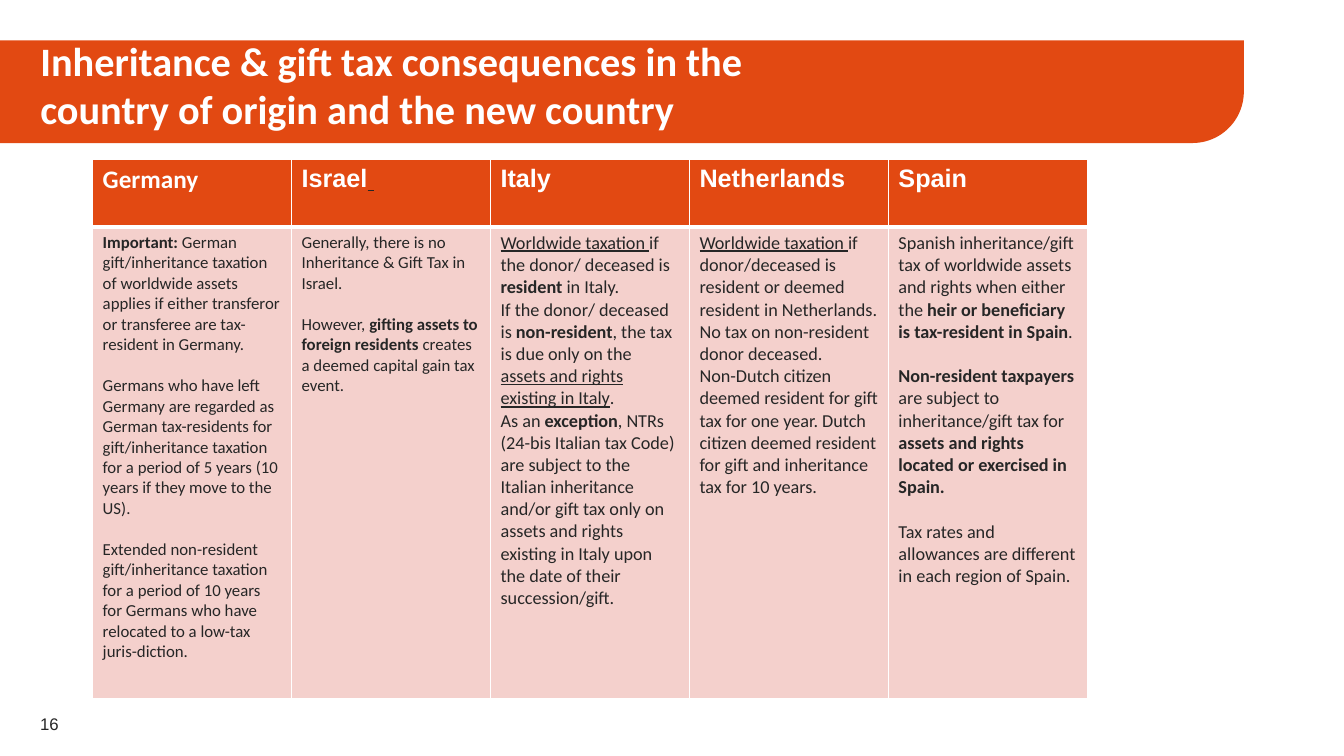
from lxml import etree
from pptx import Presentation
from pptx.dml import color
from pptx.enum import shapes, text
from pptx.oxml import ns
from pptx.util import Pt

COLORS = {"band": "E24912", "body": "F4D0CC", "ink": "262626", "white": "FFFFFF"}
HEADINGS = [
    ("Germany", "Calibri"),
    ("Israel", "Arial"),
    ("Italy", "Arial"),
    ("Netherlands", "Arial"),
    ("Spain", "Arial"),
]
BOLD = {"bold": True}
LINED = {"underline": True}
COUNTRIES = [
    {"size": 12, "gap": 14.65, "paras": [
        [("Important: ", BOLD),
         ("German gift/inheritance taxation of worldwide assets applies if either "
          "transferor or transferee are tax-resident in Germany.", {})],
        [("Germans who have left Germany are regarded as German tax-residents for "
          "gift/inheritance taxation for a period of 5 years (10 years if they move "
          "to the US).", {})],
        [("Extended non-resident gift/inheritance taxation for a period of 10 years "
          "for Germans who have relocated to a low-tax juris-diction.", {})],
    ]},
    {"size": 12, "gap": 14.65, "paras": [
        [("Generally, there is no Inheritance & Gift Tax in Israel.", {})],
        [("However, ", {}), ("gifting assets to foreign residents ", BOLD),
         ("creates a deemed capital gain tax event.", {})],
    ]},
    {"size": 13, "gap": 0, "paras": [
        [("Worldwide taxation ", LINED), ("if the donor/ deceased is ", {}),
         ("resident", BOLD), (" in Italy.", {})],
        [("If the donor/ deceased is ", {}), ("non-resident", BOLD),
         (", the tax is due only on the ", {}),
         ("assets and rights existing in Italy", LINED), (".", {})],
        [("As an ", {}), ("exception", BOLD),
         (", NTRs (24-bis Italian tax Code) are subject to the Italian inheritance "
          "and/or gift tax only on assets and rights existing in Italy upon the date "
          "of their succession/gift.", {})],
    ]},
    {"size": 13, "gap": 0, "paras": [
        [("Worldwide taxation ", LINED),
         ("if donor/deceased is resident or deemed resident in Netherlands. "
          "No tax on non-resident donor deceased.", {})],
        [("Non-Dutch citizen deemed resident for gift tax for one year. Dutch citizen "
          "deemed resident for gift and inheritance tax for 10 years.", {})],
    ]},
    {"size": 13, "gap": 15.87, "paras": [
        [("Spanish inheritance/gift tax of worldwide assets and rights when either "
          "the ", {}), ("heir or beneficiary is tax-resident in Spain", BOLD), (".", {})],
        [("Non-resident taxpayers ", BOLD),
         ("are subject to inheritance/gift tax for ", {}),
         ("assets and rights located or exercised in Spain.", BOLD)],
        [("Tax rates and allowances are different in each region of Spain.", {})],
    ]},
]


def rgb(name):
    return color.RGBColor.from_string(COLORS[name])


def write_span(para, words, size=12, face="Calibri", ink="ink", bold=False, underline=False):
    span = para.add_run()
    span.text = words
    span.font.size = Pt(size)
    span.font.name = face
    span.font.bold = bold
    span.font.underline = underline
    span.font.color.rgb = rgb(ink)


def style_cell(cell, fill, top, bottom):
    properties = cell._tc.get_or_add_tcPr()
    for side, width in (("L", 1), ("R", 1), ("T", top), ("B", bottom)):
        line = etree.SubElement(properties, ns.qn(f"a:ln{side}"), w=str(Pt(width)))
        solid = etree.SubElement(line, ns.qn("a:solidFill"))
        etree.SubElement(solid, ns.qn("a:srgbClr"), val=COLORS["white"])
    cell.fill.solid()
    cell.fill.fore_color.rgb = rgb(fill)


def place(shape, left, top, width, height):
    shape.left, shape.top = Pt(left), Pt(top)
    shape.width, shape.height = Pt(width), Pt(height)


def add_title_band(page, left, top, width, height):
    band = page.shapes.add_shape(
        shapes.MSO_SHAPE.ROUND_1_RECTANGLE,
        Pt(left), Pt(top), Pt(width), Pt(height))
    band.adjustments[0] = 0.5
    band.shadow.inherit = False
    band.fill.solid()
    band.fill.fore_color.rgb = rgb("band")
    band.line.fill.background()
    band._element.spPr.find(ns.qn("a:xfrm")).set("flipV", "1")
    page.shapes._spTree.insert(2, band._element)

    title = page.shapes.title
    place(title, left + 21.6, top + 23, 598.3, 16.6)
    frame = title.text_frame
    frame.word_wrap = True
    frame.auto_size = text.MSO_AUTO_SIZE.NONE
    frame.vertical_anchor = text.MSO_ANCHOR.MIDDLE
    para = frame.paragraphs[0]
    para.alignment = text.PP_ALIGN.LEFT
    para.line_spacing = 1.0
    para.space_before = Pt(0)
    write_span(para, "Inheritance & gift tax consequences in the country of origin "
               "and the new country", size=28.8, ink="white", bold=True)


def add_country_table(page, left, top, width, height, header_height=48.3):
    table = page.shapes.add_table(
        2, len(COUNTRIES), Pt(left), Pt(top), Pt(width), Pt(height)).table
    table.rows[0].height = Pt(header_height)
    table.rows[1].height = Pt(height - header_height)
    for index, ((heading, face), country) in enumerate(zip(HEADINGS, COUNTRIES)):
        table.columns[index].width = Pt(width / len(COUNTRIES))
        header, body = table.cell(0, index), table.cell(1, index)
        style_cell(header, "band", 1, 3)
        style_cell(body, "body", 3, 1)
        para = header.text_frame.paragraphs[0]
        write_span(para, heading, size=18, face=face, ink="white", bold=True)
        if heading == "Israel":
            write_span(para, " ", size=18, face=face, bold=True, underline=True)
        for number, spans in enumerate(country["paras"]):
            frame = body.text_frame
            para = frame.add_paragraph() if number else frame.paragraphs[0]
            para.space_before = Pt(country["gap"] if number else 0)
            for words, look in spans:
                write_span(para, words, size=country["size"], **look)


def add_page_number(page, left, top, width, height):
    box = page.shapes.add_textbox(Pt(left), Pt(top), Pt(width), Pt(height))
    box.text_frame.word_wrap = True
    box.text_frame.vertical_anchor = text.MSO_ANCHOR.MIDDLE
    write_span(box.text_frame.paragraphs[0], "16", face="Arial")


def main():
    deck = Presentation()
    deck.slide_width, deck.slide_height = Pt(960), Pt(540)
    page = deck.slides.add_slide(deck.slide_layouts[5])
    add_title_band(page, 0, 28.8, 888.5, 73.4)
    add_country_table(page, 66.2, 114, 710.6, 385)
    add_page_number(page, 21.6, 502.6, 45.4, 28.8)
    deck.save("out.pptx")


if __name__ == "__main__":
    main()
